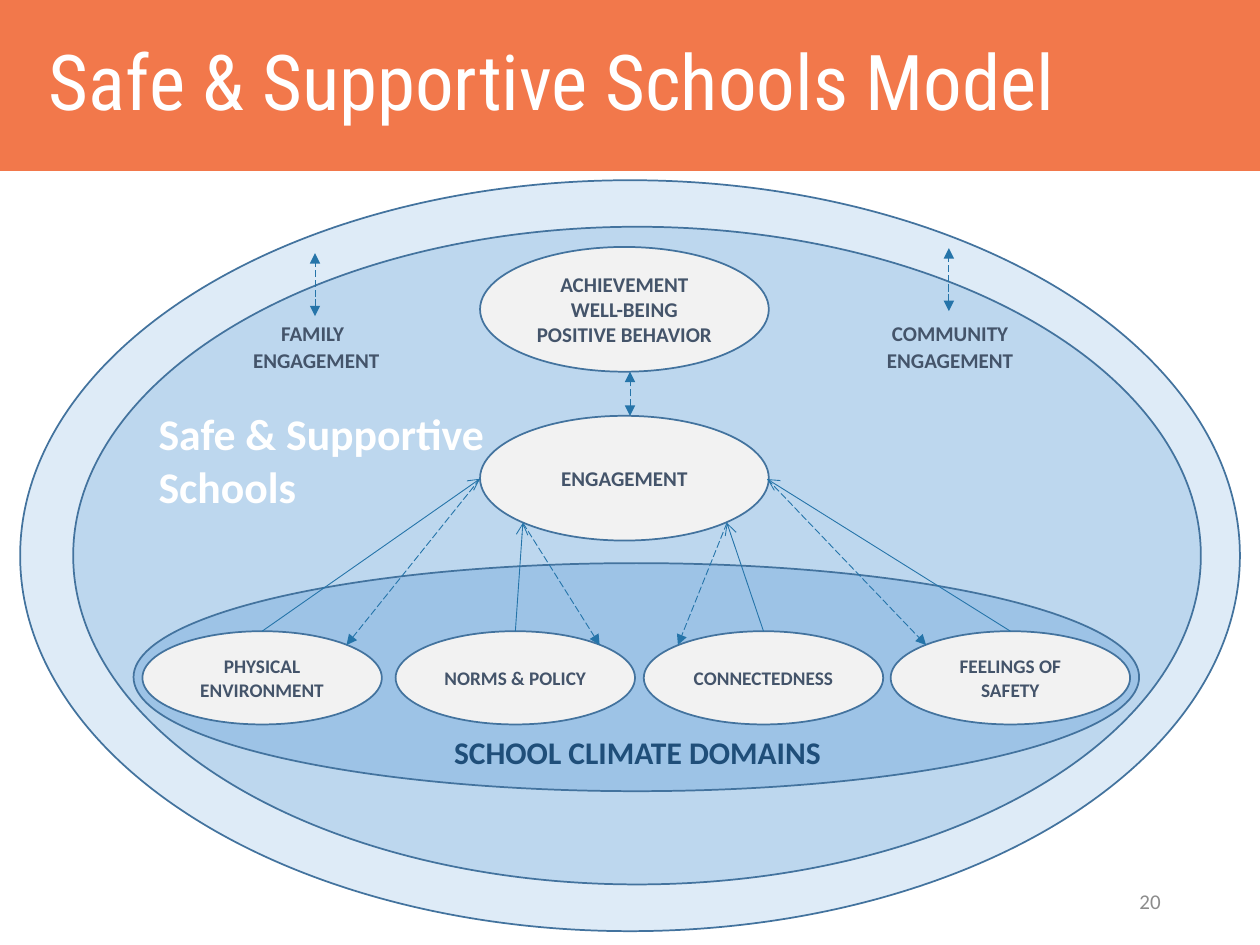
from lxml.etree import SubElement
from pptx import Presentation
from pptx.dml.color import RGBColor
from pptx.enum.dml import MSO_LINE
from pptx.enum.shapes import MSO_CONNECTOR, MSO_SHAPE
from pptx.enum.text import MSO_ANCHOR as ANCHOR, PP_ALIGN as ALIGN
from pptx.oxml.ns import qn
from pptx.util import Pt

ORANGE = RGBColor(0xF2, 0x78, 0x4B)
WHITE = RGBColor(0xFF, 0xFF, 0xFF)
OUTER_BLUE = RGBColor(0xDE, 0xEB, 0xF7)
MIDDLE_BLUE = RGBColor(0xBD, 0xD7, 0xEE)
INNER_BLUE = RGBColor(0x9D, 0xC3, 0xE6)
PALE_GRAY = RGBColor(0xF2, 0xF2, 0xF2)
OUTLINE = RGBColor(0x43, 0x73, 0x9E)
ARROW_BLUE = RGBColor(0x25, 0x74, 0xA9)
SLATE = RGBColor(0x44, 0x54, 0x6A)
NAVY = RGBColor(0x1F, 0x4E, 0x79)
NUMBER_GRAY = RGBColor(0x8C, 0x8C, 0x8C)


def add_block(kind, box, fill, outline):
    shape = slide.shapes.add_shape(kind, *map(Pt, box))
    shape.shadow.inherit = False
    shape.fill.solid()
    shape.fill.fore_color.rgb = fill
    shape.line.color.rgb = outline
    shape.line.width = Pt(1)
    return shape


def write(shape, lines, size, color, name="Calibri", bold=True, align=ALIGN.CENTER, anchor=ANCHOR.MIDDLE):
    frame = shape.text_frame
    frame.word_wrap = True
    frame.vertical_anchor = anchor
    for index, line in enumerate(lines.split("\n")):
        paragraph = frame.paragraphs[0] if index == 0 else frame.add_paragraph()
        paragraph.alignment = align
        run = paragraph.add_run()
        run.text = line
        for key, value in {"size": Pt(size), "name": name, "bold": bold}.items():
            setattr(run.font, key, value)
        run.font.color.rgb = color
    return frame.paragraphs[0]


presentation = Presentation()
presentation.slide_width, presentation.slide_height = Pt(720), Pt(540)
slide = presentation.slides.add_slide(presentation.slide_layouts[6])

add_block(MSO_SHAPE.RECTANGLE, (0, 0, 720, 97.2), ORANGE, ORANGE)
title = slide.shapes.add_textbox(Pt(20.9), Pt(0), Pt(667.4), Pt(97.2))
write(title, "Safe & Supportive Schools Model", 44, WHITE, "Roboto Condensed", False, ALIGN.LEFT).line_spacing = 0.9

domain_top, domain_width, domain_height = 360.7, 136.8, 53.3
domains = [
    (81.4, "PHYSICAL ENVIRONMENT"),
    (226.1, "NORMS & POLICY"),
    (367.9, "CONNECTEDNESS"),
    (509, "FEELINGS OF SAFETY"),
]
ellipses = [
    ((11.5, 103, 697, 429.1), OUTER_BLUE, "", 12),
    ((41.8, 129.6, 644.4, 375.8), MIDDLE_BLUE, "", 12),
    ((274.3, 237.6, 165, 71.3), PALE_GRAY, "ENGAGEMENT", 12),
    ((76.3, 321.8, 574.6, 130.3), INNER_BLUE, "", 12),
    ((274.3, 141.1, 165, 71.3), PALE_GRAY, "ACHIEVEMENT\nWELL-BEING\nPOSITIVE BEHAVIOR", 12),
]
for left, label in domains:
    ellipses.append(((left, domain_top, domain_width, domain_height), PALE_GRAY, label, 11))
for box, fill, label, size in ellipses:
    ellipse = add_block(MSO_SHAPE.OVAL, box, fill, OUTLINE)
    if label:
        write(ellipse, label, size, SLATE)

labels = [
    ((159.8, 415.4, 409, 28.8), "SCHOOL CLIMATE DOMAINS", 18, NAVY, {"anchor": ANCHOR.TOP}),
    ((83.5, 229, 200.9, 67.7), "Safe & Supportive Schools", 25, WHITE,
     {"align": ALIGN.LEFT, "anchor": ANCHOR.TOP}),
    ((508.3, 500.4, 162, 28.8), "20", 12, NUMBER_GRAY, {"align": ALIGN.RIGHT, "bold": False}),
]
for box, label, size, color, options in labels:
    write(slide.shapes.add_textbox(*map(Pt, box)), label, size, color, **options)

for left, partner, breaks in [(115.2, "FAMILY", True), (477.4, "COMMUNITY", False)]:
    partner_box = slide.shapes.add_textbox(Pt(left), Pt(173.5), Pt(131), Pt(43.9))
    paragraph = write(partner_box, partner, 12, SLATE, anchor=ANCHOR.TOP)
    for text, size in [(" ", 18), ("ENGAGEMENT", 12)]:
        run = paragraph.add_run()
        run.text = text
        for key, value in {"size": Pt(size), "name": "Calibri", "bold": True}.items():
            setattr(run.font, key, value)
        run.font.color.rgb = SLATE
        if breaks and text == " ":
            paragraph.add_line_break()

arrows = [
    ((360, 237.6), (360, 212.4), True, {"headEnd": "triangle", "tailEnd": "triangle"}),
    ((180, 180.7), (180, 144.7), True, {"headEnd": "triangle", "tailEnd": "triangle"}),
    ((542.2, 177.8), (542.2, 141.8), True, {"headEnd": "triangle", "tailEnd": "triangle"}),
]
engagement_points = [(274.3, 273.6), (298.8, 298.8), (415.4, 298.8), (438.5, 273.8)]
dashed_ends = [198, 342.7, 387.4, 529.2]
for (left, label), point, dashed_end in zip(domains, engagement_points, dashed_ends):
    arrows.append(((left + domain_width / 2, domain_top), point, False, {"tailEnd": "arrow"}))
    arrows.append((point, (dashed_end, 368.6), True, {"tailEnd": "triangle"}))

for start, end, dashed, tips in arrows:
    connector = slide.shapes.add_connector(MSO_CONNECTOR.STRAIGHT, *map(Pt, start + end))
    connector.line.color.rgb = ARROW_BLUE
    connector.line.width = Pt(0.5)
    if dashed:
        connector.line.dash_style = MSO_LINE.LONG_DASH
    properties = connector.element.spPr
    for tag, tip in tips.items():
        SubElement(properties.find(qn("a:ln")), qn("a:" + tag), type=tip)
    SubElement(properties, qn("a:effectLst"))

presentation.save("out.pptx")
